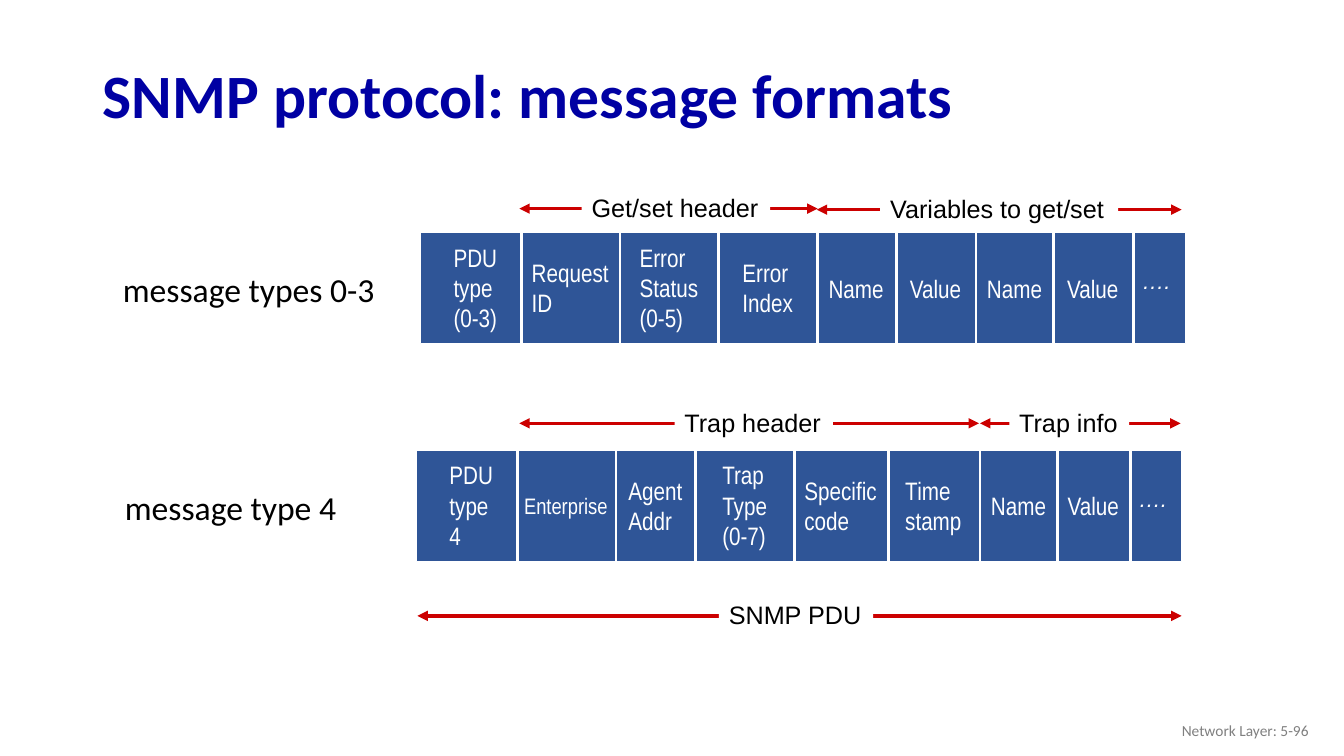
from dataclasses import dataclass

from lxml import etree
from pptx import Presentation
from pptx import util as u
from pptx.dml.color import RGBColor
from pptx.enum import shapes, text
from pptx.oxml.ns import qn


@dataclass(frozen=True)
class Theme:
    title: str = "0000A3"
    bar: str = "2F5597"
    light: str = "FFFFFF"
    ink: str = "000000"
    arrow: str = "CC0000"
    footer: str = "808080"
    head_font: str = "Calibri"
    label_font: str = "Arial"
    field_font: str = "Arial Narrow"
    title_size: int = 44
    row_size: int = 24
    label_size: int = 18
    small_size: int = 16
    footer_size: int = 11


T = Theme()
BAR_W, BAR_H = 7.59, 1.1
LINE_H, PAD = 0.305, 0.1
MORE = "…."

# Each field: cell width, text width, lines of text
GET_SET_FIELDS = [
    (1.0, 0.64, ["PDU", "type", "(0-3)"]),
    (0.98, 0.97, ["Request", "ID"]),
    (0.98, 0.79, ["Error", "Status", "(0-5)"]),
    (0.98, 0.71, ["Error", "Index"]),
    (0.78, 0.76, ["Name"]),
    (0.79, 0.72, ["Value"]),
    (0.77, 0.75, ["Name"]),
    (0.79, 0.72, ["Value"]),
    (0.52, 0.54, [MORE]),
]
TRAP_FIELDS = [
    (1.0, 0.64, ["PDU", "type", "4"]),
    (0.98, 1.04, ["Enterprise"]),
    (0.79, 0.74, ["Agent", "Addr"]),
    (0.98, 0.65, ["Trap", "Type", "(0-7)"]),
    (0.93, 0.93, ["Specific", "code"]),
    (0.91, 0.77, ["Time", "stamp"]),
    (0.77, 0.75, ["Name"]),
    (0.72, 0.72, ["Value"]),
    (0.51, 0.54, [MORE]),
]


def rgb(value):
    return RGBColor.from_string(value)


def inches(*values):
    return [u.Inches(v) for v in values]


def add_run(p, words, size, font, color, bold=None, italic=None):
    r = p.add_run()
    r.text = words
    r.font.size, r.font.name = u.Pt(size), font
    r.font.bold, r.font.italic = bold, italic
    r.font.color.rgb = rgb(color)


def add_text(s, box, lines, size, font, color, italic=None, spacing=None):
    """Unwrapped text box with one paragraph per line; returns the box."""
    sp = s.shapes.add_textbox(*inches(*box))
    tf = sp.text_frame
    tf.word_wrap = False
    tf.auto_size = text.MSO_AUTO_SIZE.SHAPE_TO_FIT_TEXT
    for i, words in enumerate(lines):
        p = tf.paragraphs[0] if i == 0 else tf.add_paragraph()
        p.line_spacing = spacing
        add_run(p, words, size, font, color, italic=italic)
    return sp


def add_line(s, x1, y1, x2, y2, color, width, arrows=False):
    line = s.shapes.add_connector(shapes.MSO_CONNECTOR.STRAIGHT, *inches(x1, y1, x2, y2))
    line.line.color.rgb = rgb(color)
    line.line.width = u.Pt(width)
    if arrows:
        ln = line.line._get_or_add_ln()
        for end in ("a:headEnd", "a:tailEnd"):
            etree.SubElement(ln, qn(end), type="triangle")
    etree.SubElement(line._element.spPr, qn("a:effectLst"))


def add_span(s, x1, x2, y, label, label_x, label_w):
    """Double-headed arrow interrupted by a label on white."""
    add_line(s, x1, y, x2, y, T.arrow, 2.5, arrows=True)
    sp = add_text(s, (label_x, y - 0.21, label_w, 0.4), [label],
                  T.label_size, T.label_font, T.ink)
    sp.fill.solid()
    sp.fill.fore_color.rgb = rgb(T.light)


def add_field(s, center, middle, width, lines):
    if lines == [MORE]:
        add_text(s, (center - width / 2, middle - 0.16, width, 0.29), lines, T.small_size,
                 T.label_font, T.light, italic=True, spacing=u.Pt(12))
        return
    size = T.small_size if lines == ["Enterprise"] else T.label_size
    height = PAD + LINE_H * len(lines) * size / T.label_size
    add_text(s, (center - width / 2, middle - height / 2, width, height), lines,
             size, T.field_font, T.light)


def add_message(s, left, top, fields, caption, caption_x, caption_w):
    """Row caption and a bar of fields parted by white lines."""
    bar = s.shapes.add_shape(shapes.MSO_SHAPE.RECTANGLE, *inches(left, top, BAR_W, BAR_H))
    bar.shadow.inherit = False
    bar.fill.solid()
    bar.fill.fore_color.rgb = rgb(T.bar)
    bar.line.color.rgb = rgb(T.light)
    bar.line.width = u.Pt(0.75)

    x = left
    for i, (cell_w, text_w, lines) in enumerate(fields):
        if i:
            add_line(s, x, top, x, top + BAR_H + 0.01, T.light, 2)
        nudge = 0.05 if i == 0 else 0
        add_field(s, x + cell_w / 2 + nudge, top + BAR_H / 2, text_w, lines)
        x += cell_w
    add_text(s, (caption_x, top + 0.31, caption_w, 0.5), [caption],
             T.row_size, T.head_font, T.ink)


def add_title(s, words):
    sp = s.shapes.title
    sp.left, sp.top, sp.width, sp.height = inches(0.92, 0.49, 11.5, 0.98)
    tf = sp.text_frame
    tf.vertical_anchor = text.MSO_ANCHOR.MIDDLE
    p = tf.paragraphs[0]
    p.alignment, p.line_spacing = text.PP_ALIGN.LEFT, 0.9
    add_run(p, words, T.title_size, T.head_font, T.title, bold=True)


def add_footer(s, words):
    tf = s.shapes.add_textbox(*inches(10.08, 7.05, 3, 0.4)).text_frame
    tf.word_wrap = True
    tf.vertical_anchor = text.MSO_ANCHOR.MIDDLE
    p = tf.paragraphs[0]
    p.alignment = text.PP_ALIGN.RIGHT
    add_run(p, words, T.footer_size, T.head_font, T.footer)


def main():
    prs = Presentation()
    prs.slide_width, prs.slide_height = inches(13.33, 7.5)
    s = prs.slides.add_slide(prs.slide_layouts[5])
    add_title(s, "SNMP protocol: message formats")
    add_footer(s, "Network Layer: 5-96")

    add_message(s, 4.17, 2.31, GET_SET_FIELDS, "message types 0-3", 1.12, 2.72)
    add_span(s, 5.15, 8.11, 2.07, "Get/set header", 5.77, 1.87)
    add_span(s, 8.1, 11.72, 2.08, "Variables to get/set", 8.73, 2.36)

    add_message(s, 4.13, 4.47, TRAP_FIELDS, "message type 4", 1.14, 2.32)
    add_span(s, 5.15, 9.71, 4.2, "Trap header", 6.69, 1.57)
    add_span(s, 9.72, 11.71, 4.2, "Trap info", 10.01, 1.19)
    add_span(s, 4.14, 11.72, 6.11, "SNMP PDU", 7.13, 1.53)
    prs.save("out.pptx")


if __name__ == "__main__":
    main()
